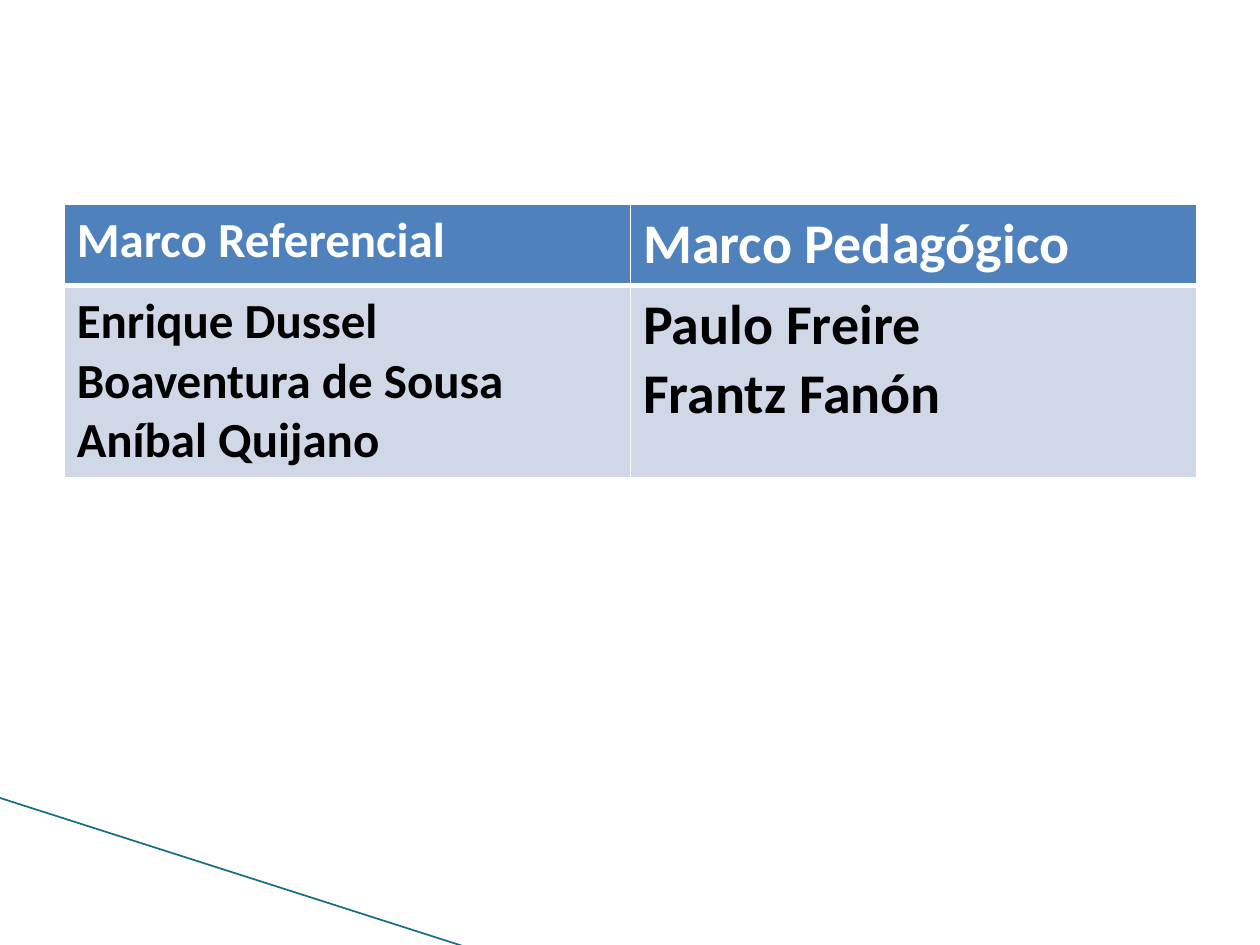
from lxml.etree import SubElement
from pptx import Presentation
from pptx.dml.color import RGBColor
from pptx.enum.shapes import MSO_CONNECTOR
from pptx.oxml.ns import qn
from pptx.util import Inches, Pt

WHITE = RGBColor(0xFF, 0xFF, 0xFF)
BLACK = RGBColor(0, 0, 0)
HEADER_BLUE = RGBColor(0x4F, 0x81, 0xBD)
BODY_BLUE = RGBColor(0xD0, 0xD8, 0xE8)
TEAL = RGBColor(0x15, 0x6D, 0x83)

SLIDE_WIDTH, SLIDE_HEIGHT = 10, 7.5
TABLE_LEFT, TABLE_TOP, TABLE_WIDTH = 0.51, 1.62, 8.99
COLUMNS = [
    {"size": 28, "header": ["Marco Referencial"],
     "body": ["Enrique Dussel", "Boaventura de Sousa", "Aníbal Quijano"]},
    {"size": 32, "header": ["Marco Pedagógico"],
     "body": ["Paulo Freire", "Frantz Fanón"]},
]
ROWS = [
    {"part": "header", "height": 0.63, "fill": HEADER_BLUE, "color": WHITE,
     "borders": {"lnL": 1, "lnR": 1, "lnT": 1, "lnB": 3}},
    {"part": "body", "height": 1.5, "fill": BODY_BLUE, "color": BLACK,
     "borders": {"lnL": 1, "lnR": 1, "lnT": 3, "lnB": 1}},
]


def set_borders(cell, borders):
    properties = cell._tc.get_or_add_tcPr()
    for side, width in borders.items():
        line = SubElement(properties, qn(f"a:{side}"), w=str(Pt(width)))
        fill = SubElement(line, qn("a:solidFill"))
        SubElement(fill, qn("a:srgbClr"), val=str(WHITE))


def write_lines(cell, lines, font_format):
    text_frame = cell.text_frame
    text_frame.text = "\n".join(lines)
    for paragraph in text_frame.paragraphs:
        for run in paragraph.runs:
            for name, value in font_format.items():
                setattr(run.font, name, value)


def add_corner_line(slide):
    line = slide.shapes.add_connector(
        MSO_CONNECTOR.STRAIGHT, Inches(-0.01), Inches(6.33), Inches(3.71), Inches(7.52))
    line.line.color.rgb = TEAL
    line.line.width = Pt(0.95)
    SubElement(line._element.spPr, qn("a:effectLst"))


def add_framework_table(slide):
    height = sum(row["height"] for row in ROWS)
    table = slide.shapes.add_table(
        len(ROWS), len(COLUMNS), Inches(TABLE_LEFT), Inches(TABLE_TOP),
        Inches(TABLE_WIDTH), Inches(height)).table
    for row_index, row in enumerate(ROWS):
        table.rows[row_index].height = Inches(row["height"])
        for column_index, column in enumerate(COLUMNS):
            cell = table.cell(row_index, column_index)
            set_borders(cell, row["borders"])
            cell.fill.solid()
            cell.fill.fore_color.rgb = row["fill"]
            write_lines(cell, column[row["part"]], {
                "name": "Calibri", "size": Pt(column["size"]), "bold": True})
            for paragraph in cell.text_frame.paragraphs:
                for run in paragraph.runs:
                    run.font.color.rgb = row["color"]


def main():
    presentation = Presentation()
    presentation.slide_width = Inches(SLIDE_WIDTH)
    presentation.slide_height = Inches(SLIDE_HEIGHT)
    slide = presentation.slides.add_slide(presentation.slide_layouts[6])
    add_corner_line(slide)
    add_framework_table(slide)
    presentation.save("out.pptx")


if __name__ == "__main__":
    main()
